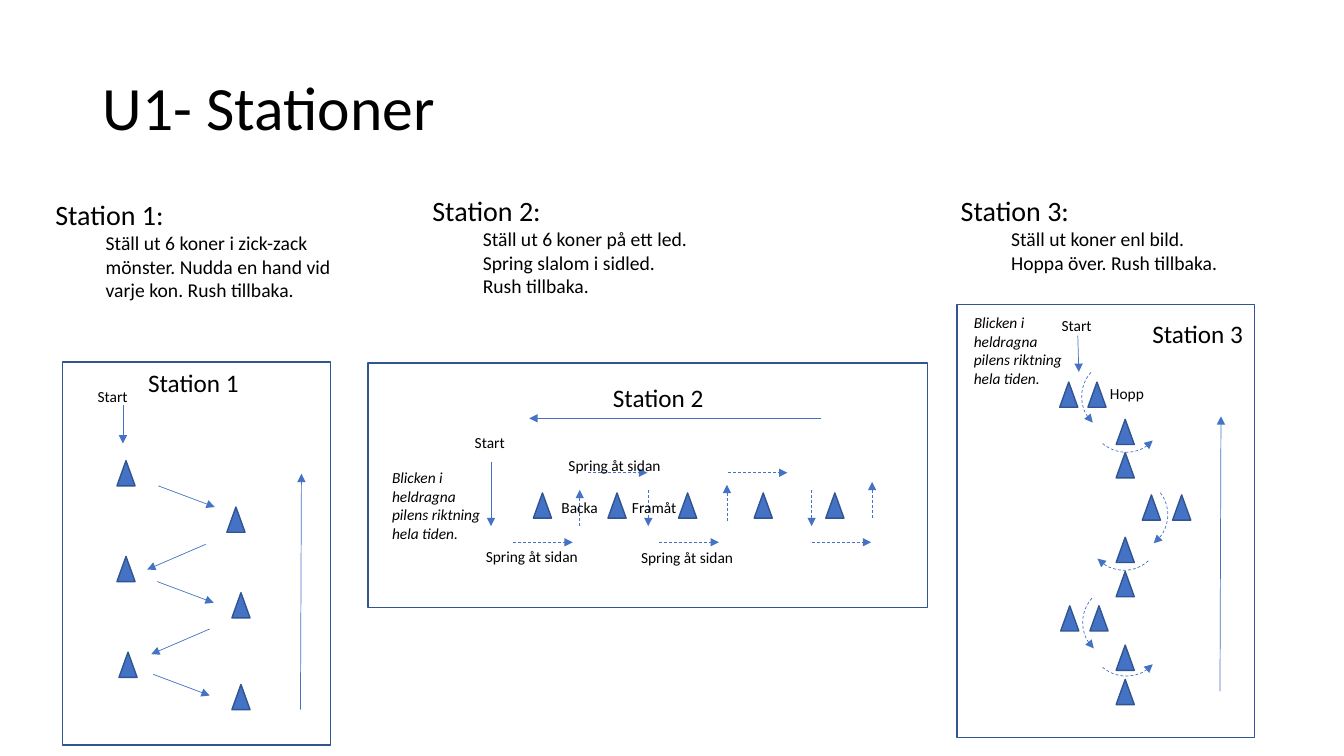
import dataclasses

import lxml.etree
import pptx
import pptx.dml.color
import pptx.enum.dml
import pptx.enum.shapes
import pptx.enum.text
import pptx.oxml.ns
import pptx.util

Inches = pptx.util.Inches
Shape = pptx.enum.shapes.MSO_SHAPE


@dataclasses.dataclass(frozen=True)
class Theme:
    """Colours, font, type sizes and line widths."""
    font: str = "Calibri"
    ink: str = "000000"
    blue: str = "4472C4"
    edge: str = "325491"
    title: int = 44
    heading: int = 20
    label: int = 18
    body: int = 14
    note: int = 11
    thick: float = 1
    thin: float = 0.5


THEME = Theme()
LOOK = "Blicken i heldragna pilens riktning hela tiden."
SIDEWAYS = "Spring åt sidan"


def rgb(value):
    """Turn a hex string into a colour."""
    return pptx.dml.color.RGBColor.from_string(value)


def add_text(shapes, text, left, top, width, height, size=THEME.note, italic=False,
             wrap=True, anchor=pptx.enum.text.MSO_ANCHOR.TOP, spacing=None, grow=True):
    """Add a text box with one formatted paragraph and return it."""
    box = shapes.add_textbox(Inches(left), Inches(top), Inches(width), Inches(height))
    frame = box.text_frame
    frame.word_wrap = wrap
    frame.vertical_anchor = anchor
    if grow:
        frame.auto_size = pptx.enum.text.MSO_AUTO_SIZE.SHAPE_TO_FIT_TEXT
    para = frame.paragraphs[0]
    if spacing:
        para.line_spacing = spacing
    add_span(para, text, size, italic)
    return box


def add_span(para, text, size, italic=False):
    """Add formatted text to a paragraph."""
    span = para.add_run()
    span.text = text
    span.font.name = THEME.font
    span.font.size = pptx.util.Pt(size)
    span.font.italic = italic
    span.font.color.rgb = rgb(THEME.ink)


def style_line(line, color, width, dashed=False):
    """Set the colour, width and dash of a line."""
    line.color.rgb = rgb(color)
    line.width = pptx.util.Pt(width)
    if dashed:
        line.dash_style = pptx.enum.dml.MSO_LINE.DASH


def add_arrowhead(shape, end):
    """Put a triangle at the headEnd or tailEnd of a line."""
    ln = shape.line._get_or_add_ln()
    lxml.etree.SubElement(ln, pptx.oxml.ns.qn(f"a:{end}"), type="triangle")


def add_outline(shapes, kind, left, top, width, height, color=THEME.edge,
                weight=THEME.thick, dashed=False):
    """Add an unfilled preset shape with an outline."""
    shape = shapes.add_shape(kind, Inches(left), Inches(top), Inches(width), Inches(height))
    shape.shadow.inherit = False
    shape.fill.background()
    style_line(shape.line, color, weight, dashed)
    return shape


def add_cones(shapes, left, top, spots):
    """Add a cone at each spot, measured from the given corner."""
    for x, y in spots:
        cone = add_outline(shapes, Shape.ISOSCELES_TRIANGLE, left + x, top + y, 0.18, 0.25)
        cone.fill.solid()
        cone.fill.fore_color.rgb = rgb(THEME.blue)


def add_arrows(shapes, left, top, routes, dashed=False):
    """Add an arrow for each route, measured from the given corner."""
    for x1, y1, x2, y2 in routes:
        arrow = shapes.add_connector(
            pptx.enum.shapes.MSO_CONNECTOR.STRAIGHT, Inches(left + x1), Inches(top + y1),
            Inches(left + x2), Inches(top + y2))
        style_line(arrow.line, THEME.blue, THEME.thin, dashed)
        add_arrowhead(arrow, "tailEnd")
        lxml.etree.SubElement(arrow._element.spPr, pptx.oxml.ns.qn("a:effectLst"))


def add_jumps(shapes, left, top, jumps):
    """Add a dashed curved arrow for each jump."""
    for x, y, angle, end in jumps:
        arc = add_outline(shapes, Shape.ARC, left + x, top + y, 0.71, 0.72,
                          THEME.blue, THEME.thin, dashed=True)
        arc.rotation = angle
        add_arrowhead(arc, end)


def add_labels(shapes, left, top, labels):
    """Add small labels given as text, offset and width."""
    for text, x, y, width in labels:
        add_text(shapes, text, left + x, top + y, width, 0.29)


def start_station(page, name, box, name_x, name_y):
    """Add the frame and name of a station and return its group's shapes."""
    left, top, width, height = box
    shapes = page.shapes.add_group_shape().shapes
    add_outline(shapes, Shape.RECTANGLE, left, top, width, height)
    add_text(shapes, name, left + name_x, top + name_y, 1.11, 0.4,
             size=THEME.label, wrap=False)
    return shapes


def add_instruction(page, heading, body, left, top, width, height):
    """Add a station heading with its indented instruction."""
    box = add_text(page.shapes, heading, left, top, width, height, size=THEME.heading)
    para = box.text_frame.add_paragraph()
    para.level = 1
    para._p.get_or_add_pPr().set("marL", str(Inches(0.5)))
    add_span(para, body, THEME.body)


def add_zigzag_station(page, box):
    """Draw station 1, the zigzag run."""
    left, top = box[:2]
    shapes = start_station(page, "Station 1", box, 0.75, 0)
    add_cones(shapes, left, top, [
        (0.54, 0.98), (1.63, 1.44), (0.54, 1.93), (1.68, 2.29), (0.56, 2.88), (1.68, 3.2)])
    add_arrows(shapes, left, top, [
        (0.6, 0.43, 0.6, 0.81), (0.95, 1.23, 1.51, 1.44), (1.42, 1.81, 0.84, 2.06),
        (0.94, 2.18, 1.5, 2.39), (1.46, 2.65, 0.88, 2.9), (0.9, 3.1, 1.46, 3.31),
        (2.36, 3.45, 2.37, 1.11)])
    add_labels(shapes, left, top, [("Start", 0.25, 0.2, 0.51)])


def add_slalom_station(page, box):
    """Draw station 2, the sideways slalom."""
    left, top = box[:2]
    shapes = start_station(page, "Station 2", box, 2.33, 0.14)
    add_cones(shapes, left, top, [(x, 1.29) for x in (1.64, 2.38, 3.08, 3.83, 4.54)])
    add_arrows(shapes, left, top, [(1.22, 0.98, 1.22, 1.62), (4.49, 0.55, 1.6, 0.55)])
    sideways = [(1.44, 1.78), (2.18, 1.09), (2.89, 1.78), (3.57, 1.09), (4.4, 1.78)]
    backward = [(2.1, 1.62), (3.56, 1.57), (5, 1.54)]
    forward = [(2.78, 1.26), (4.4, 1.26)]
    add_arrows(shapes, left, top,
               [(x, y, x + 0.59, y) for x, y in sideways]
               + [(x, y, x, y - 0.36) for x, y in backward]
               + [(x, y, x, y + 0.36) for x, y in forward], dashed=True)
    add_labels(shapes, left, top, [
        ("Start", 0.96, 0.65, 0.51), (SIDEWAYS, 1.07, 1.78, 1.14),
        (SIDEWAYS, 1.89, 0.88, 1.14), (SIDEWAYS, 2.61, 1.79, 1.14),
        ("Backa", 1.82, 1.29, 0.66), ("Framåt", 2.52, 1.29, 0.66)])
    add_text(shapes, LOOK, left + 0.14, top + 1, 1.14, 0.84, italic=True)


def add_jump_station(page, box):
    """Draw station 3, the jumps over cone pairs."""
    left, top = box[:2]
    shapes = start_station(page, "Station 3", box, 1.84, 0.09)
    add_cones(shapes, left, top, [
        (1.02, 0.77), (1.3, 0.77), (1.58, 1.14), (1.58, 1.47), (1.84, 1.89), (2.14, 1.89),
        (1.58, 2.31), (1.58, 2.65), (1.03, 2.99), (1.32, 2.99), (1.58, 3.38), (1.58, 3.72)])
    add_arrows(shapes, left, top, [(1.2, 0.31, 1.21, 0.67), (2.61, 3.84, 2.62, 1.11)])
    add_jumps(shapes, left, top, [
        (1.24, 0.55, 223.2, "headEnd"), (1.32, 0.75, 131.9, "headEnd"),
        (1.38, 1.73, 52.2, "tailEnd"), (1.3, 1.92, 137, "tailEnd"),
        (1.25, 2.79, 223.2, "headEnd"), (1.32, 2.97, 131.9, "headEnd")])
    add_labels(shapes, left, top, [("Start", 0.94, 0.07, 0.51), ("Hopp", 1.42, 0.74, 0.55)])
    add_text(shapes, LOOK, left + 0.07, top + 0.04, 1.14, 0.84, italic=True)


def main():
    """Build and save the deck."""
    deck = pptx.Presentation()
    deck.slide_width, deck.slide_height = Inches(13.33), Inches(7.5)
    page = deck.slides.add_slide(deck.slide_layouts[6])
    add_text(page.shapes, "U1- Stationer", 0.92, 0.37, 11.5, 1.45, size=THEME.title,
             anchor=pptx.enum.text.MSO_ANCHOR.MIDDLE, spacing=0.9, grow=False)
    add_slalom_station(page, (3.65, 3.6, 5.55, 2.43))
    add_instruction(page, "Station 1:", "Ställ ut 6 koner i zick-zack mönster. Nudda en hand "
                    "vid varje kon. Rush tillbaka.", 0.45, 1.91, 3.16, 1.14)
    add_instruction(page, "Station 2:", "Ställ ut 6 koner på ett led. Spring slalom i sidled. "
                    "Rush tillbaka.", 4.19, 1.87, 2.76, 1.14)
    add_instruction(page, "Station 3:", "Ställ ut koner enl bild. Hoppa över. Rush tillbaka.",
                    9.43, 1.87, 2.76, 0.91)
    add_jump_station(page, (9.49, 3.02, 2.95, 4.3))
    add_zigzag_station(page, (0.62, 3.59, 2.66, 3.8))
    deck.save("out.pptx")


if __name__ == "__main__":
    main()
